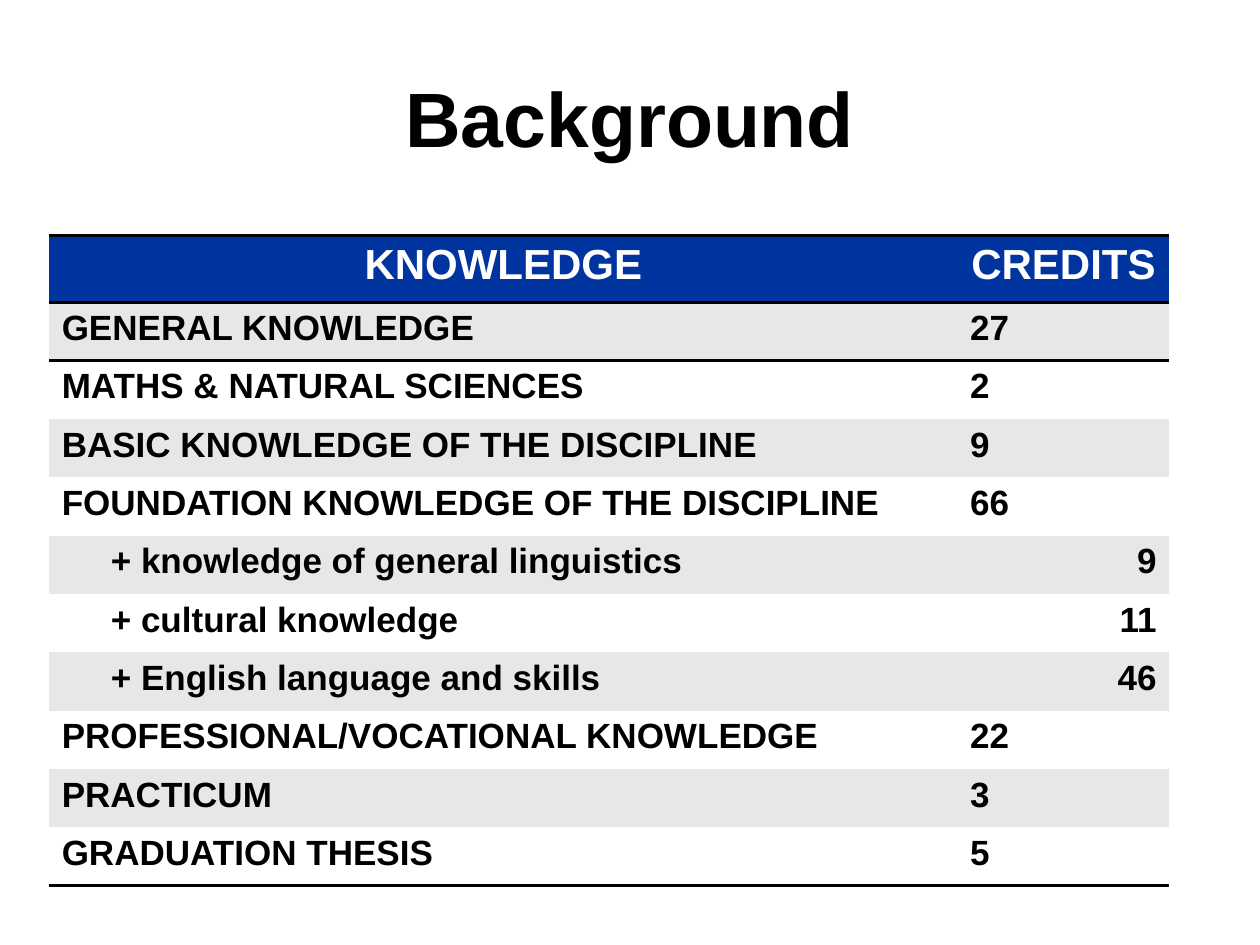
from lxml import etree
from pptx import Presentation
from pptx.dml.color import RGBColor
from pptx.enum.text import MSO_ANCHOR, PP_ALIGN
from pptx.oxml.ns import qn
from pptx.util import Inches, Pt

LEFT, CENTER, RIGHT = PP_ALIGN.LEFT, PP_ALIGN.CENTER, PP_ALIGN.RIGHT
MIDDLE = MSO_ANCHOR.MIDDLE
BLACK = RGBColor(0x00, 0x00, 0x00)
WHITE = RGBColor(0xFF, 0xFF, 0xFF)
BLUE = RGBColor(0x00, 0x34, 0x9E)
GRAY = RGBColor(0xE7, 0xE7, 0xE7)
PLAIN_STYLE = "{2D5ABB26-0587-4C30-8999-92F81FD0307C}"

HEADS = ("KNOWLEDGE", "CREDITS")
# Subject, credits, is it a part of the subject above
ROWS = [
    ("GENERAL KNOWLEDGE", "27", False),
    ("MATHS & NATURAL SCIENCES", "2", False),
    ("BASIC KNOWLEDGE OF THE DISCIPLINE", "9", False),
    ("FOUNDATION KNOWLEDGE OF THE DISCIPLINE", "66", False),
    ("+ knowledge of general linguistics", "9", True),
    ("+ cultural knowledge", "11", True),
    ("+ English language and skills", "46", True),
    ("PROFESSIONAL/VOCATIONAL KNOWLEDGE", "22", False),
    ("PRACTICUM", "3", False),
    ("GRADUATION THESIS", "5", False),
]


class Deck:
    font = "Arial"

    def __init__(self, slide):
        self.slide = slide

    def label(self, frame, text, size, color, align):
        para = frame.paragraphs[0]
        para.text = text
        para.alignment = align
        font = para.font
        font.name, font.size, font.bold = self.font, Pt(size), True
        font.color.rgb = color

    def title(self, text, left, top, width, height):
        box = self.slide.shapes.add_textbox(
            Inches(left), Inches(top), Inches(width), Inches(height))
        frame = box.text_frame
        frame.word_wrap = True
        frame.vertical_anchor = MIDDLE
        self.label(frame, text, 44, BLACK, CENTER)

    def table(self, left, top, widths, heights):
        frame = self.slide.shapes.add_table(
            len(heights), len(widths), Inches(left), Inches(top),
            Inches(sum(widths)), Inches(sum(heights)))
        table = frame.table
        table._tbl.tblPr.find(qn("a:tableStyleId")).text = PLAIN_STYLE
        for col, width in zip(table.columns, widths):
            col.width = Inches(width)
        for row, height in zip(table.rows, heights):
            row.height = Inches(height)
        return table

    def cell(self, cell, text, size, color, fill, align=LEFT, rules=""):
        self.label(cell.text_frame, text, size, color, align)
        # Borders come before the fill in the cell's XML
        props = cell._tc.get_or_add_tcPr()
        for side in rules:
            line = etree.SubElement(props, qn(f"a:ln{side}"), w=str(Pt(2)))
            solid = etree.SubElement(line, qn("a:solidFill"))
            etree.SubElement(solid, qn("a:srgbClr"), val=str(BLACK))
        cell.fill.solid()
        cell.fill.fore_color.rgb = fill


def main():
    prs = Presentation()
    prs.slide_width, prs.slide_height = Inches(10), Inches(7.5)
    deck = Deck(prs.slides.add_slide(prs.slide_layouts[6]))

    deck.title("Background", 0.5, 0.3, 9, 1.25)

    # Header row, then equal rows down to the table's full height
    head, full = 0.53, 5.16
    step = (full - head) / len(ROWS)
    table = deck.table(0.39, 1.87, [7.21, 1.68], [head] + [step] * len(ROWS))
    for col, text in enumerate(HEADS):
        deck.cell(table.cell(0, col), text, 24, WHITE, BLUE, CENTER, "TB")

    # Banded body rows, with a rule under the last
    for num, (name, credits, part) in enumerate(ROWS, 1):
        fill = GRAY if num % 2 else WHITE
        rules = "T" if num == 1 else "B" if num == len(ROWS) else ""
        left, right = table.cell(num, 0), table.cell(num, 1)
        deck.cell(left, name, 20, BLACK, fill, LEFT, rules)
        deck.cell(right, credits, 20, BLACK, fill, RIGHT if part else LEFT, rules)
        if part:
            left.margin_left = Inches(0.49)

    prs.save("out.pptx")


if __name__ == "__main__":
    main()
